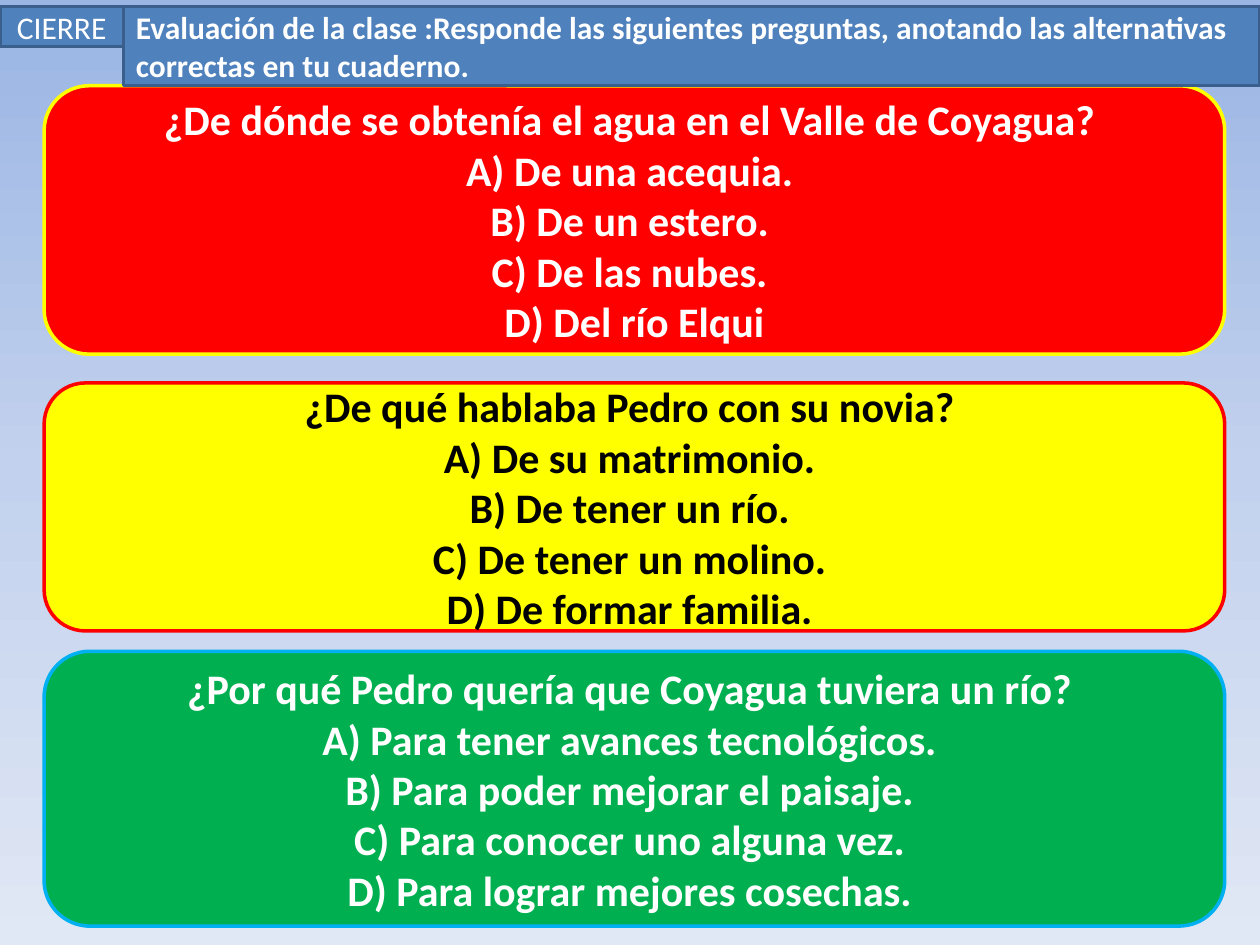
from copy import deepcopy

from pptx import Presentation
from pptx.dml.color import RGBColor
from pptx.enum.shapes import MSO_SHAPE as SHAPE
from pptx.enum.text import MSO_ANCHOR as ANCHOR, PP_ALIGN as ALIGN
from pptx.oxml.ns import qn
from pptx.util import Cm, Pt

WIDTH, HEIGHT = 25.4, 19.05
WHITE, BLACK = "FFFFFF", "000000"
BAR_FILL, BAR_LINE = "4F81BD", "3A5F8C"
BAR_TOP, LABEL_WIDTH = 0.13, 2.49
CARD_LEFT, CARD_WIDTH = 0.89, 23.8

# top, height, fill, line, text colour, lines
QUESTIONS = [
    (1.73, 5.41, "FF0000", "FFFF00", WHITE, [
        "¿De dónde se obtenía el agua en el Valle de Coyagua? ",
        "A) De una acequia. ",
        "B) De un estero. ",
        "C) De las nubes. ",
        "D) Del río Elqui",
    ]),
    (7.72, 5, "FFFF00", "FF0000", BLACK, [
        "¿De qué hablaba Pedro con su novia? ",
        "A) De su matrimonio. ",
        "B) De tener un río. ",
        "C) De tener un molino. ",
        "D) De formar familia. ",
    ]),
    (13.13, 5.54, "00B050", "00B0F0", WHITE, [
        "¿Por qué Pedro quería que Coyagua tuviera un río? ",
        "A) Para tener avances tecnológicos. ",
        "B) Para poder mejorar el paisaje. ",
        "C) Para conocer uno alguna vez. ",
        "D) Para lograr mejores cosechas. ",
    ]),
]


def rgb(value):
    return RGBColor.from_string(value)


def set_background(s, colors):
    """Fill the slide from top to bottom with evenly spaced colours."""
    fill = s.background.fill
    fill.gradient()
    fill.gradient_angle = 270
    stop_list = s.element.find(".//" + qn("a:gsLst"))
    while len(stop_list) < len(colors):
        stop_list.append(deepcopy(stop_list[0]))
    for i, (stop, color) in enumerate(zip(fill.gradient_stops, colors)):
        stop.position = i / (len(colors) - 1)
        stop.color.rgb = rgb(color)


def add_box(s, kind, left, top, width, height, fill, line):
    sp = s.shapes.add_shape(kind, Cm(left), Cm(top), Cm(width), Cm(height))
    sp.shadow.inherit = False
    sp.fill.solid()
    sp.fill.fore_color.rgb = rgb(fill)
    sp.line.color.rgb = rgb(line)
    sp.line.width = Pt(2)
    return sp


def write(sp, lines, size, color=WHITE, bold=True, align=ALIGN.CENTER):
    tf = sp.text_frame
    tf.word_wrap = True
    tf.vertical_anchor = ANCHOR.MIDDLE
    tf.text = "\n".join(lines)
    for p in tf.paragraphs:
        p.alignment = align
        for r in p.runs:
            r.font.name = "Calibri"
            r.font.size = Pt(size)
            r.font.bold = bold
            r.font.color.rgb = rgb(color)


def add_question(s, top, height, fill, line, color, lines):
    card = add_box(s, SHAPE.ROUNDED_RECTANGLE, CARD_LEFT, top,
                   CARD_WIDTH, height, fill, line)
    write(card, lines, 24, color)


def main():
    prs = Presentation()
    prs.slide_width, prs.slide_height = Cm(WIDTH), Cm(HEIGHT)
    s = prs.slides.add_slide(prs.slide_layouts[6])
    set_background(s, ["9AB5E4", "C2D1ED", "E1E8F5"])

    label = add_box(s, SHAPE.RECTANGLE, 0, BAR_TOP, LABEL_WIDTH, 0.81,
                    BAR_FILL, BAR_LINE)
    write(label, ["CIERRE"], 18, bold=False)
    for question in QUESTIONS:
        add_question(s, *question)
    header = add_box(s, SHAPE.RECTANGLE, LABEL_WIDTH, BAR_TOP,
                     WIDTH - LABEL_WIDTH, 1.6, BAR_FILL, BAR_LINE)
    write(header, ["Evaluación de la clase :Responde las siguientes preguntas, "
                   "anotando las alternativas correctas en tu cuaderno."],
          18, align=ALIGN.LEFT)

    prs.save("out.pptx")


if __name__ == "__main__":
    main()
